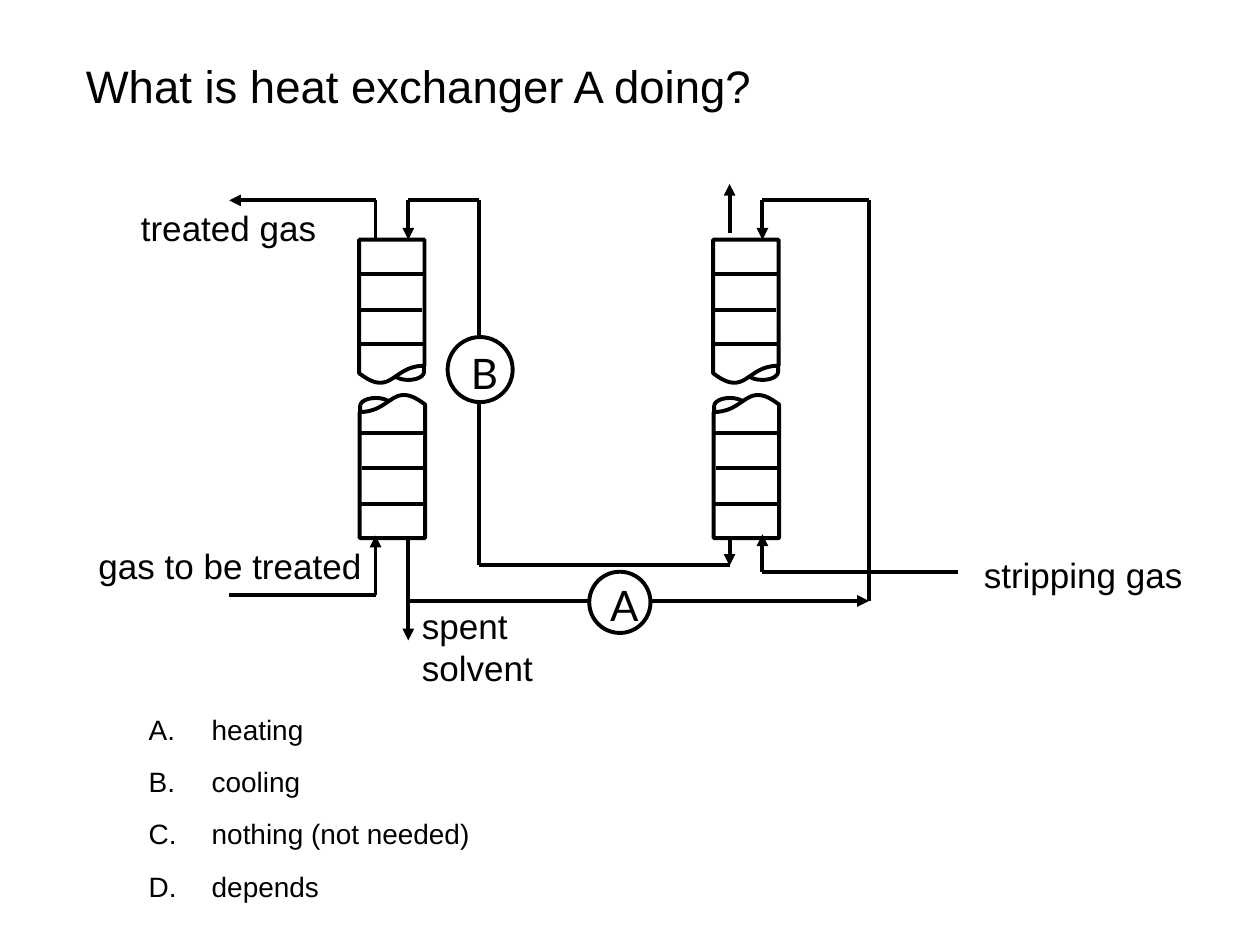
"""Build a slide about heat exchangers between an absorber and a stripper."""
from lxml import etree
from pptx import Presentation
from pptx.dml.color import RGBColor
from pptx.enum.shapes import MSO_CONNECTOR, MSO_SHAPE
from pptx.enum.text import MSO_ANCHOR, MSO_AUTO_SIZE, PP_ALIGN
from pptx.oxml.ns import qn
from pptx.util import Pt

STRAIGHT = MSO_CONNECTOR.STRAIGHT
OVAL = MSO_SHAPE.OVAL
TORN_EDGE = MSO_SHAPE.FLOWCHART_STORED_DATA
LEFT, CENTER = PP_ALIGN.LEFT, PP_ALIGN.CENTER
TOP, MIDDLE = MSO_ANCHOR.TOP, MSO_ANCHOR.MIDDLE
NO_AUTOSIZE = MSO_AUTO_SIZE.NONE

COLORS = {"ink": "000000", "paper": "FFFFFF"}
LINE_WIDTH = 2.25

TITLE = "What is heat exchanger A doing?"
ANSWERS = ["heating", "cooling", "nothing (not needed)", "depends"]

TOWER_LEFTS = [205.2, 407.5]
TOWER_TOP, TOWER_BOTTOM, TOWER_WIDTH = 137, 307.5, 37.4
TRAYS = [(0, 19.5), (-0.7, 40.2), (0, 59.8)]
TRAY_WIDTH = 36.5
WALL = [(0, 0), (TOWER_WIDTH, 0)]
BREAK_CURVE = [(TOWER_WIDTH, 72), (18.7, 72), (18.7, 90.7), (0, 76.3)]
CURVE_STEPS = 24
TORN_LEFT, TORN_TOP, TORN_WIDTH, TORN_HEIGHT = 14.4, 57.4, 27.4, 18

PIPES = [  # corner points, arrowhead at the end
    ([(131, 340), (214.6, 340), (214.6, 306)], True),
    ([(214.6, 137), (214.6, 114.5), (131, 114.5)], True),
    ([(233.3, 307.5), (233.3, 366)], True),
    ([(233.3, 343.4), (496.6, 343.4)], True),
    ([(496.6, 343.4), (496.6, 114.5), (435.7, 114.5), (435.7, 137)], True),
    ([(416.9, 133.2), (416.9, 105.1)], True),
    ([(547.4, 326.9), (435.7, 326.9), (435.7, 305.3)], True),
    ([(416.9, 307.5), (416.9, 323.3)], True),
    ([(416.9, 322.7), (273.6, 322.7), (273.6, 114.5),
      (233.3, 114.5), (233.3, 137)], True),
]
LABELS = [
    (["stripping gas"], (555.1, 312.5, 128.2, 31), LEFT),
    (["gas to be treated"], (49, 307.4, 164.9, 31), CENTER),
    (["spent", "solvent"], (234, 342, 77.8, 55.4), LEFT),
    (["treated gas"], (73.4, 114.5, 114.5, 31), CENTER),
]
EXCHANGERS = [("A", 336.7, 326.7, 35), ("B", 255.8, 192.6, 37.2)]


def color(name):
    return RGBColor.from_string(COLORS[name])


def points(*values):
    return [Pt(value) for value in values]


def add_text(paragraph, text, size, font="Arial"):
    run = paragraph.add_run()
    run.text = text
    run.font.size = Pt(size)
    run.font.name = font
    run.font.color.rgb = color("ink")


def set_frame(frame, margins, wrap=True, anchor=TOP):
    frame.word_wrap = wrap
    frame.auto_size = NO_AUTOSIZE
    frame.vertical_anchor = anchor
    (frame.margin_left, frame.margin_top,
     frame.margin_right, frame.margin_bottom) = points(*margins)


def style_shape(shape):
    shape.shadow.inherit = False
    shape.fill.solid()
    shape.fill.fore_color.rgb = color("paper")
    shape.line.color.rgb = color("ink")
    shape.line.width = Pt(LINE_WIDTH)


def add_line(slide, start, end, arrow=False):
    line = slide.shapes.add_connector(STRAIGHT, *points(*start, *end))
    line.line.color.rgb = color("ink")
    line.line.width = Pt(LINE_WIDTH)
    properties = line._element.spPr
    if arrow:
        etree.SubElement(properties.find(qn("a:ln")), qn("a:tailEnd"), type="triangle")
    etree.SubElement(properties, qn("a:effectLst"))


def bezier(controls, t):
    weights = [(1 - t) ** 3, 3 * t * (1 - t) ** 2, 3 * t ** 2 * (1 - t), t ** 3]
    return tuple(sum(w * p[axis] for w, p in zip(weights, controls)) for axis in (0, 1))


def add_half_tower(slide, origin_x, origin_y, sign):
    """Draw a half tower from its outer corner; sign -1 turns it upside down."""
    def place(x, y):
        return origin_x + sign * x, origin_y + sign * y

    center_x, center_y = place(TORN_LEFT + TORN_WIDTH / 2, TORN_TOP + TORN_HEIGHT / 2)
    torn = slide.shapes.add_shape(TORN_EDGE, *points(
        center_x - TORN_WIDTH / 2, center_y - TORN_HEIGHT / 2, TORN_WIDTH, TORN_HEIGHT))
    torn.rotation = 180 + 90 * sign
    style_shape(torn)

    curve = [bezier(BREAK_CURVE, step / CURVE_STEPS) for step in range(CURVE_STEPS + 1)]
    outline = [points(*place(*corner)) for corner in WALL + curve]
    builder = slide.shapes.build_freeform(*outline[0])
    builder.add_line_segments(outline[1:], close=True)
    style_shape(builder.convert_to_shape())

    for x, y in TRAYS:
        add_line(slide, place(x, y), place(x + TRAY_WIDTH, y))


def add_title(slide):
    title = slide.shapes.title
    title.left, title.top, title.width, title.height = points(49, 30.2, 551.5, 54)
    set_frame(title.text_frame, (0, 0, 0, 0))
    paragraph = title.text_frame.paragraphs[0]
    paragraph.alignment = LEFT
    paragraph.line_spacing = 1.1
    add_text(paragraph, TITLE, 26)


def add_answers(slide):
    frame = slide.shapes.add_textbox(*points(85, 397.4, 583.2, 97.2)).text_frame
    set_frame(frame, (0, 0, 0, 0))
    for index, answer in enumerate(ANSWERS):
        paragraph = frame.add_paragraph() if index else frame.paragraphs[0]
        paragraph.line_spacing = 1.5
        paragraph.space_after = Pt(1.15)
        properties = paragraph._p.get_or_add_pPr()
        properties.set("marL", str(Pt(36)))
        properties.set("indent", str(-Pt(36)))
        etree.SubElement(properties, qn("a:buFont"), typeface="Arial")
        etree.SubElement(properties, qn("a:buAutoNum"), type="alphaUcPeriod")
        add_text(paragraph, answer, 16)


def add_label(slide, lines, box, alignment):
    frame = slide.shapes.add_textbox(*points(*box)).text_frame
    set_frame(frame, (7.2, 3.6, 7.2, 3.6), wrap=False)
    for index, line in enumerate(lines):
        paragraph = frame.add_paragraph() if index else frame.paragraphs[0]
        paragraph.alignment = alignment
        add_text(paragraph, line, 20)


def add_exchanger(slide, name, left, top, diameter):
    circle = slide.shapes.add_shape(OVAL, *points(left, top, diameter, diameter))
    style_shape(circle)
    set_frame(circle.text_frame, (5, 3, 0, 0), wrap=False, anchor=MIDDLE)
    paragraph = circle.text_frame.paragraphs[0]
    paragraph.alignment = CENTER
    add_text(paragraph, name, 24, "Lato")


def main():
    presentation = Presentation()
    presentation.slide_width, presentation.slide_height = points(720, 540)
    slide = presentation.slides.add_slide(presentation.slide_layouts[5])
    add_title(slide)
    add_answers(slide)
    for left in TOWER_LEFTS:
        add_half_tower(slide, left, TOWER_TOP, 1)
        add_half_tower(slide, left + TOWER_WIDTH + 0.3, TOWER_BOTTOM, -1)
    for corners, arrow in PIPES:
        last = len(corners) - 2
        for index, (start, end) in enumerate(zip(corners, corners[1:])):
            add_line(slide, start, end, arrow and index == last)
    for label in LABELS:
        add_label(slide, *label)
    for exchanger in EXCHANGERS:
        add_exchanger(slide, *exchanger)
    presentation.save("out.pptx")


if __name__ == "__main__":
    main()
